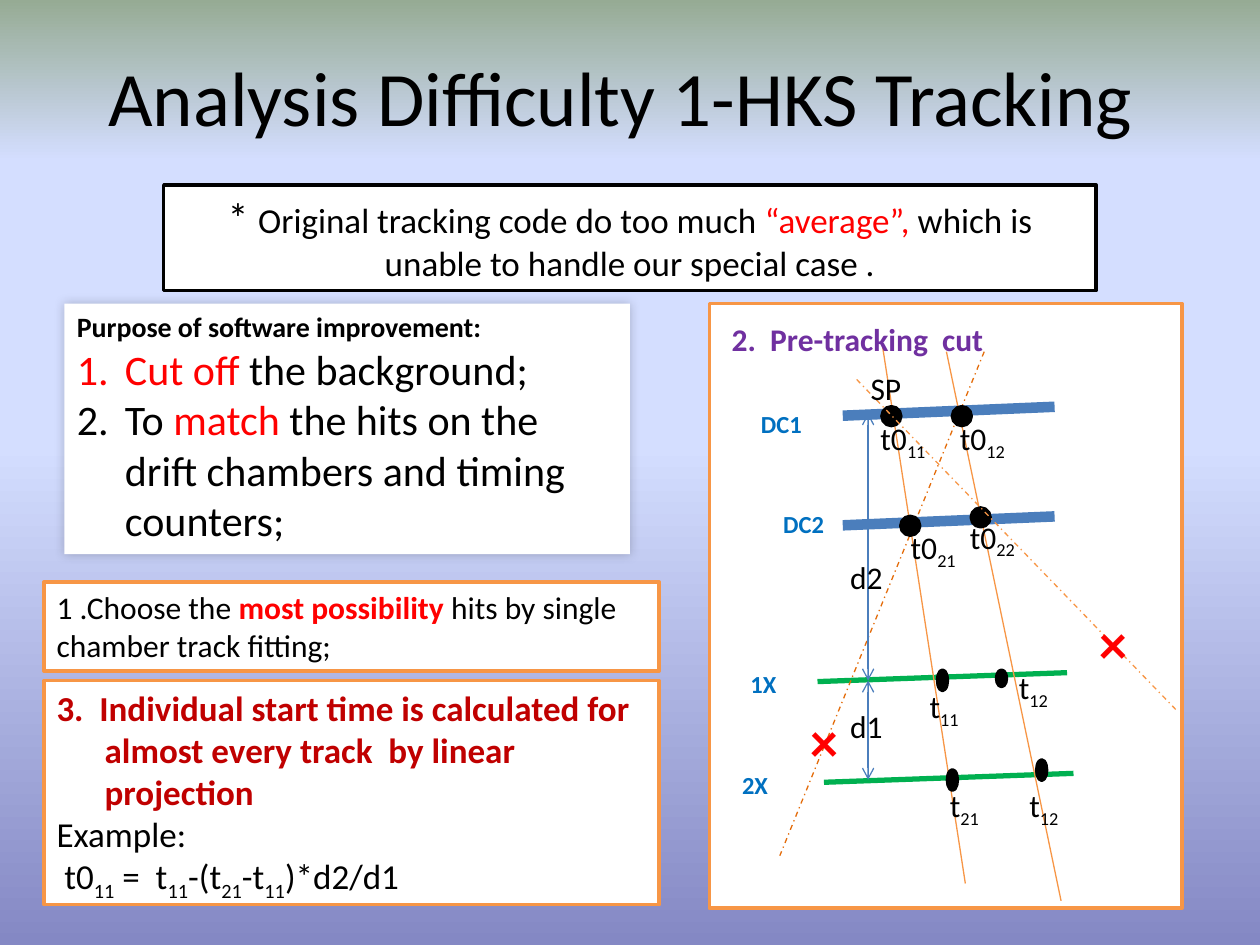
from lxml import etree
from pptx import Presentation
from pptx.dml.color import RGBColor
from pptx.enum.dml import MSO_LINE
from pptx.enum.shapes import MSO_CONNECTOR, MSO_SHAPE
from pptx.enum.text import MSO_ANCHOR, PP_ALIGN
from pptx.oxml.ns import qn
from pptx.util import Cm, Pt

STRAIGHT = MSO_CONNECTOR.STRAIGHT
RECTANGLE = MSO_SHAPE.RECTANGLE
OVAL = MSO_SHAPE.OVAL
DASH_DOT = MSO_LINE.DASH_DOT
TOP, MIDDLE = MSO_ANCHOR.TOP, MSO_ANCHOR.MIDDLE
LEFT, CENTER = PP_ALIGN.LEFT, PP_ALIGN.CENTER

FONT = "Calibri"
BLACK = RGBColor(0x00, 0x00, 0x00)
WHITE = RGBColor(0xFF, 0xFF, 0xFF)
RED = RGBColor(0xFF, 0x00, 0x00)
DARK_RED = RGBColor(0xC0, 0x00, 0x00)
ORANGE = RGBColor(0xF7, 0x96, 0x46)
DARK_ORANGE = RGBColor(0xE4, 0x6C, 0x0A)
BLUE = RGBColor(0x4B, 0x7E, 0xBC)
LABEL_BLUE = RGBColor(0x00, 0x70, 0xC0)
GREEN = RGBColor(0x00, 0xB0, 0x50)
PURPLE = RGBColor(0x70, 0x30, 0xA0)
INDIGO = RGBColor(0x84, 0x88, 0xC4)
PALE_BLUE = RGBColor(0xD4, 0xDE, 0xFF)
SAGE = RGBColor(0x96, 0xAB, 0x94)
BACKGROUND_STOPS = [(0, INDIGO), (53, PALE_BLUE), (83, PALE_BLUE), (100, SAGE)]

HANGING = 0.97
PLANE_RISE = 0.18
LABELS = [("DC1", 15.09, 8.13), ("DC2", 15.54, 10.13),
          ("1X", 14.88, 13.36), ("2X", 14.71, 15.39)]
PLANES = [(16.99, 8.38, 4.27, BLUE, 6), (16.99, 10.59, 4.27, BLUE, 6),
          (16.48, 13.74, 5.03, GREEN, 3), (16.61, 15.77, 5.03, GREEN, 3)]
TRACKS = [((19.84, 7.09), (15.72, 17.25), DARK_ORANGE, DASH_DOT),
          ((17.78, 6.91), (19.46, 17.81), ORANGE, None),
          ((19.08, 7.09), (21.39, 18.16), ORANGE, None),
          ((17.27, 7.65), (23.7, 14.3), ORANGE, DASH_DOT)]
CHAMBER_HITS = [(17.78, 8.2), (19.2, 8.2), (18.16, 10.41), (19.58, 10.24)]
COUNTER_HITS = [(18.9, 13.51, 0.41), (20.09, 13.51, 0.33),
                (19.1, 15.52, 0.41), (20.9, 15.32, 0.41)]
TIMES = [("t0", "11", 17.5, 8.33), ("t0", "12", 19.1, 8.33),
         ("t0", "21", 18.11, 10.52), ("t0", "22", 19.3, 10.31),
         ("t", "11", 18.49, 13.72), ("t", "12", 20.29, 13.34),
         ("t", "21", 18.9, 15.72), ("t", "12", 20.5, 15.72)]
CROSSES = [(16.08, 14.12), (21.92, 12.14)]
DISTANCE_LEFT = 17.5
DISTANCES = [("d2", 8.33, 13.72, 11.13), ("d1", 13.72, 15.72, 14.12)]


def add_xml(parent, tag, **attributes):
    """Append an XML child and return it."""
    return etree.SubElement(parent, qn(tag), attributes)


def paint_background(slide):
    """Fill the slide background with an upward gradient."""
    slide.background.fill.solid()
    solid = slide.element.find(".//" + qn("p:bgPr")).find(qn("a:solidFill"))
    gradient = etree.Element(qn("a:gradFill"), rotWithShape="1")
    stops = add_xml(gradient, "a:gsLst")
    for position, color in BACKGROUND_STOPS:
        stop = add_xml(stops, "a:gs", pos=str(position * 1000))
        add_xml(stop, "a:srgbClr", val=str(color))
    add_xml(gradient, "a:lin", ang="16200000", scaled="0")
    solid.getparent().replace(solid, gradient)


def write_paragraph(shape, runs, size=18, color=BLACK, bold=False,
                    align=LEFT, indent=0, numbered=False):
    """Write one paragraph of plain strings or (text, overrides) runs."""
    frame = shape.text_frame
    paragraph = frame.paragraphs[-1]
    if paragraph.runs:
        paragraph = frame.add_paragraph()
    paragraph.alignment = align
    properties = paragraph._p.get_or_add_pPr()
    if indent:
        properties.set("marL", str(Cm(indent)))
        properties.set("indent", str(-Cm(indent)))
    if numbered:
        add_xml(properties, "a:buFont", typeface="+mj-lt")
        add_xml(properties, "a:buAutoNum", type="arabicPeriod")
    for item in [runs] if isinstance(runs, str) else runs:
        text, changes = (item, {}) if isinstance(item, str) else item
        run = paragraph.add_run()
        run.text = text
        run.font.name = FONT
        run.font.size = Pt(changes.get("size", size))
        run.font.bold = changes.get("bold", bold)
        run.font.color.rgb = changes.get("color", color)
        if changes.get("subscript"):
            run.font._element.set("baseline", "-25000")


def subscripted(*parts):
    """Return runs in which every second part is a subscript."""
    return [(part, {"subscript": index % 2 == 1}) for index, part in enumerate(parts)]


def add_label(shapes, text, left, top, width, height, wrap=True, anchor=TOP, **text_format):
    """Add a text box with one paragraph."""
    label = shapes.add_textbox(Cm(left), Cm(top), Cm(width), Cm(height))
    label.text_frame.word_wrap = wrap
    label.text_frame.vertical_anchor = anchor
    write_paragraph(label, text, **text_format)


def add_solid(shapes, kind, left, top, width, height, fill, line=None):
    """Add a filled preset shape with an optional outline."""
    shape = shapes.add_shape(kind, Cm(left), Cm(top), Cm(width), Cm(height))
    shape.shadow.inherit = False
    shape.fill.solid()
    shape.fill.fore_color.rgb = fill
    if line is None:
        shape.line.fill.background()
    else:
        shape.line.color.rgb = line
        shape.line.width = Pt(2)
    shape.text_frame.word_wrap = True
    shape.text_frame.vertical_anchor = TOP
    return shape


def add_glow(shape):
    """Give a shape a soft shadow on all sides."""
    effects = shape._element.spPr.find(qn("a:effectLst"))
    shadow = add_xml(effects, "a:outerShdw", blurRad=str(Pt(6)), dist="0",
                     dir="13500000", algn="br", rotWithShape="0")
    color = add_xml(shadow, "a:srgbClr", val=str(BLACK))
    add_xml(color, "a:alpha", val="20000")


def add_line(shapes, start, end, color, width=0.75, dash=None, arrows=False):
    """Add a straight line, optionally with an arrowhead at each end."""
    points = [Cm(value) for value in (*start, *end)]
    connector = shapes.add_connector(STRAIGHT, *points)
    connector.line.color.rgb = color
    connector.line.width = Pt(width)
    if dash is not None:
        connector.line.dash_style = dash
    if arrows:
        for tag in ("a:headEnd", "a:tailEnd"):
            add_xml(connector.line._get_or_add_ln(), tag, type="arrow")
    add_xml(connector._element.spPr, "a:effectLst")


def add_diagram(shapes):
    """Draw the detector planes, tracks, hits and their labels."""
    add_solid(shapes, RECTANGLE, 14.3, 6.12, 9.53, 12.19, WHITE, ORANGE)
    for text, left, top in LABELS:
        add_label(shapes, text, left, top, 1.6, 0.86, size=14, color=LABEL_BLUE, bold=True)
    for left, top, length, color, width in PLANES:
        add_line(shapes, (left, top), (left + length, top - PLANE_RISE), color, width)
    for start, end, color, dash in TRACKS[:3]:
        add_line(shapes, start, end, color, dash=dash)
    for left, top in CHAMBER_HITS:
        add_solid(shapes, OVAL, left, top, 0.38, 0.38, BLACK, BLACK)
    start, end, color, dash = TRACKS[3]
    add_line(shapes, start, end, color, dash=dash)
    for left, top in CROSSES:
        add_label(shapes, "×", left, top, 1.19, 1.63, size=32, color=RED, bold=True)
    add_label(shapes, "SP", 17.3, 7.32, 1.19, 1.04)
    for left, top, height in COUNTER_HITS:
        add_solid(shapes, OVAL, left, top, 0.2, height, BLACK, BLACK)
    for name, index, left, top in TIMES:
        add_label(shapes, subscripted(name, index), left, top, 1.6, 1.02)
    for name, top, bottom, label_top in DISTANCES:
        add_line(shapes, (DISTANCE_LEFT, top), (DISTANCE_LEFT, bottom), BLUE, arrows=True)
        add_label(shapes, name, 16.89, label_top, 1.17, 1.02, wrap=False)
    add_label(shapes, "2.  Pre-tracking  cut", 14.5, 6.32, 5.79, 1.02,
              color=PURPLE, bold=True, indent=HANGING)


def main():
    """Build the slide and save it."""
    presentation = Presentation()
    presentation.slide_width, presentation.slide_height = Cm(25.4), Cm(19.05)
    slide = presentation.slides.add_slide(presentation.slide_layouts[6])
    shapes = slide.shapes
    red = {"color": RED}
    paint_background(slide)
    add_label(shapes, "Analysis Difficulty 1-HKS Tracking", 1.09, 0.53, 22.86, 2.79,
              anchor=MIDDLE, size=44, align=CENTER)

    problem = add_solid(shapes, RECTANGLE, 3.3, 3.73, 18.8, 2.13, WHITE, BLACK)
    write_paragraph(problem, [("* ", {"size": 24}), "Original tracking code do too much ",
                              ("“average”, ", red),
                              "which is unable to handle our special case ."],
                    size=20, align=CENTER)

    start_time = add_solid(shapes, RECTANGLE, 0.89, 13.72, 12.4, 4.52, WHITE, ORANGE)
    write_paragraph(start_time, "3.  Individual start time is calculated for almost every "
                    "track  by linear projection",
                    size=20, color=DARK_RED, bold=True, indent=HANGING)
    formula = subscripted(" t0", "11", " =  t", "11", "-(t", "21", "-t", "11", ")*d2/d1")
    for runs in ("Example:", formula):
        write_paragraph(start_time, runs, size=20, indent=HANGING)

    add_diagram(shapes.add_group_shape().shapes)

    purpose = add_solid(shapes, RECTANGLE, 1.3, 6.12, 11.4, 5.05, WHITE)
    add_glow(purpose)
    write_paragraph(purpose, "Purpose of software improvement:", size=16, bold=True)
    for runs in ([("Cut off ", red), "the background;"],
                 ["To ", ("match", red),
                  " the hits on the drift chambers and timing counters;"]):
        write_paragraph(purpose, runs, size=24, indent=HANGING, numbered=True)

    choice = add_solid(shapes, RECTANGLE, 0.89, 11.73, 12.4, 1.8, WHITE, ORANGE)
    write_paragraph(choice, ["1 .Choose the ",
                             ("most possibility ", {"color": RED, "bold": True}),
                             "hits by single chamber track fitting;"])
    presentation.save("out.pptx")


if __name__ == "__main__":
    main()
